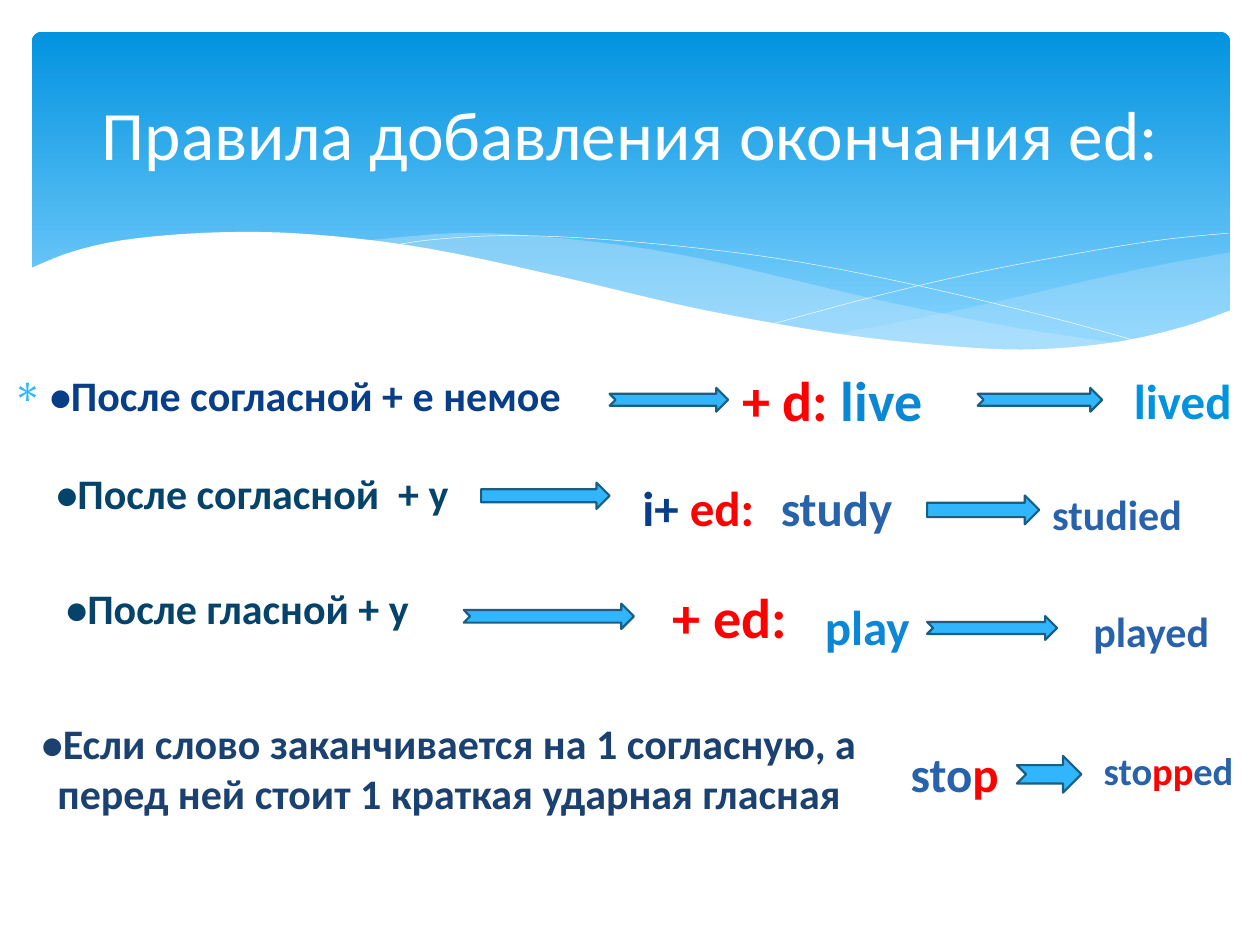
from lxml import etree
from pptx import Presentation
from pptx import util as u
from pptx.dml.color import RGBColor
from pptx.enum import shapes, text
from pptx.oxml.ns import qn

COLOURS = {
    "white": "FFFFFF", "sky_top": "0293E0", "sky_low": "83D3FE", "mist": "C6E7FC",
    "arrow": "31B6FD", "edge": "195F84", "navy": "073E87", "teal": "06436B",
    "ink": "1B4171", "blue": "2862AA", "bright": "0B87D6", "red": "FF0000",
}
PLAIN = shapes.MSO_SHAPE.RIGHT_ARROW
NOTCHED = shapes.MSO_SHAPE.NOTCHED_RIGHT_ARROW

# Header curves: x, y in cm from the header's corner
RIGHT_WAVE = [
    [(24.16, 4.45), (22.76, 4.7), (21.23, 5.03), (19.15, 5.51), (17.3, 5.89), (16.15, 6.1)],
    [(16.15, 6.1), (17.96, 6.32), (19.76, 6.43), (21.51, 6.32), (22.94, 6.05), (24.16, 5.64)],
]
MIDDLE_WAVE = [
    [(22.05, 6.3), (19.86, 5.97), (17.3, 5.46), (15.34, 5), (13.46, 4.57), (11.79, 4.29),
     (10.03, 4.11), (8.53, 4.06), (6.63, 4.22)],
    [(6.63, 4.22), (8.56, 4.52), (10.77, 5), (13.74, 5.66), (15.88, 6.07), (17.7, 6.32),
     (19.86, 6.43), (22.05, 6.3)],
]
FALLING_LINE = [[(7.21, 4.32), (8.1, 4.19), (9.55, 4.11), (11.28, 4.17), (13.49, 4.37),
                 (15.52, 4.65), (17.83, 5.11), (20.47, 5.74), (22.4, 6.27)]]
RISING_LINE = [[(14.94, 5.89), (17.02, 5.33), (19.08, 4.85), (21.36, 4.42),
                (22.83, 4.19), (24.13, 4.06)]]
WHITE_WAVE = [
    [(-0.05, 4.78), (0.86, 4.42), (2.06, 4.17), (3.86, 4.04), (5.72, 4.09), (8, 4.37),
     (10.72, 4.95), (13.46, 5.59), (16.33, 6.1), (18.69, 6.35), (20.27, 6.4),
     (21.89, 6.25), (23.24, 5.94), (24.18, 5.61)],
    [(24.18, 7.72), (-0.05, 7.72)],
]

# Each rule: top, texts (x, y, width, height, size, spans), arrows (x, y, width, height, kind)
RULES = [
    (7.24,
     [(0, 0.08, 22.5, 1.52, 24, [("•После согласной + e немое", "navy")]),
      (14.71, 0, 5, 1.63, 32, [("+ d: ", "red"), ("live", "bright")]),
      (22.61, 0.1, 2.59, 1.45, 28, [("lived", "sky_top")])],
     [(12.29, 0.58, 2.39, 0.48, NOTCHED), (19.71, 0.58, 2.51, 0.48, NOTCHED)]),
    (9.3,
     [(0.89, 0, 8.79, 1.27, 24, [("•После согласной  + y", "teal")]),
      (12.7, 0.2, 2.79, 1.45, 28, [("i+ ", "navy"), ("ed:", "red")]),
      (15.49, 0.2, 2.87, 1.45, 28, [("study", "blue")]),
      (20.96, 0.43, 3.53, 1.27, 24, [("studied", "blue")])],
     [(9.7, 0.43, 2.59, 0.53, PLAIN), (18.69, 0.69, 2.26, 0.58, PLAIN)]),
    (11.61,
     [(1.09, 0, 8.26, 1.27, 24, [("•После гласной + y", "teal")]),
      (13.31, 0, 3.4, 1.63, 32, [("+ ed:", "red")]),
      (16.38, 0.3, 2.31, 1.45, 28, [("play", "bright")]),
      (21.79, 0.48, 3.1, 1.27, 24, [("played", "blue")])],
     [(9.35, 0.56, 3.43, 0.51, NOTCHED), (18.69, 0.81, 2.62, 0.48, NOTCHED)]),
    (14.33,
     [(0, 0, 18.11, 2.31, 24,
       [("•Если слово заканчивается на 1 согласную, а перед ней стоит "
         "1 краткая ударная гласная", "ink")]),
      (18.11, 0.53, 2.39, 1.45, 28, [("sto", "blue"), ("p", "red")]),
      (22, 0.61, 3.71, 1.19, 22, [("sto", "blue"), ("pp", "red"), ("ed", "blue")])],
     [(20.5, 0.91, 1.3, 0.74, NOTCHED)]),
]


def colour(name):
    return RGBColor.from_string(COLOURS[name])


def smooth(points, steps=5):
    """Catmull-Rom curve through the points."""
    if len(points) < 3:
        return points
    padded = [points[0], *points, points[-1]]
    curve = []
    for a, b, c, d in zip(padded, padded[1:], padded[2:], padded[3:]):
        for t in (step / steps for step in range(steps)):
            curve.append(tuple(
                0.5 * (2 * q + (r - p) * t + (2 * p - 5 * q + 4 * r - s) * t ** 2
                       + (3 * q - p - 3 * r + s) * t ** 3)
                for p, q, r, s in zip(a, b, c, d)))
    return curve + [points[-1]]


def add_wave(page, left, top, curves, fill=None, opacity=100):
    points = [(u.Cm(left + x), u.Cm(top + y)) for curve in curves for x, y in smooth(curve)]
    builder = page.shapes.build_freeform(*points[0])
    builder.add_line_segments(points[1:], close=fill is not None)
    wave = builder.convert_to_shape()
    wave.shadow.inherit = False
    if fill is None:
        wave.fill.background()
        wave.line.color.rgb = colour("white")
        wave.line.width = u.Pt(0.25)
        return
    wave.fill.solid()
    wave.fill.fore_color.rgb = colour(fill)
    wave.line.fill.background()
    if opacity < 100:
        tint = wave.fill._xPr.find(".//" + qn("a:srgbClr"))
        etree.SubElement(tint, qn("a:alpha"), val=str(opacity * 1000))


def add_text(page, left, top, width, height, size, spans, bold=True, align=None, anchor=None):
    box = page.shapes.add_textbox(*map(u.Cm, (left, top, width, height)))
    box.text_frame.word_wrap = True
    box.text_frame.vertical_anchor = anchor
    para = box.text_frame.paragraphs[0]
    para.alignment = align
    for words, name in spans:
        span = para.add_run()
        span.text = words
        for key, value in {"name": "Calibri", "size": u.Pt(size), "bold": bold}.items():
            setattr(span.font, key, value)
        span.font.color.rgb = colour(name)
    return para


def add_star_bullet(para):
    props = para._p.get_or_add_pPr()
    props.set("marL", str(u.Cm(0.76)))
    props.set("indent", str(-u.Cm(0.76)))
    tint = etree.SubElement(props, qn("a:buClr"))
    etree.SubElement(tint, qn("a:srgbClr"), val=COLOURS["arrow"])
    etree.SubElement(props, qn("a:buChar"), char="∗")


def add_arrow(page, left, top, width, height, kind):
    arrow = page.shapes.add_shape(kind, *map(u.Cm, (left, top, width, height)))
    arrow.shadow.inherit = False
    arrow.fill.solid()
    arrow.fill.fore_color.rgb = colour("arrow")
    arrow.line.color.rgb = colour("edge")
    arrow.line.width = u.Pt(1.25)


def add_header(page, left, top, width, height):
    # Gradient panel
    panel = page.shapes.add_shape(shapes.MSO_SHAPE.ROUNDED_RECTANGLE,
                                  *map(u.Cm, (left, top, width, height)))
    panel.adjustments[0] = 0.03
    panel.shadow.inherit = False
    panel.line.fill.background()
    panel.fill.gradient()
    panel.fill.gradient_angle = 270
    stops = (("sky_top", 0), ("sky_low", 0.9))
    for stop, (name, position) in zip(panel.fill.gradient_stops, stops):
        stop.color.rgb = colour(name)
        stop.position = position
    # Waves
    add_wave(page, left, top, RIGHT_WAVE, "mist", 29)
    add_wave(page, left, top, MIDDLE_WAVE, "mist", 40)
    add_wave(page, left, top, FALLING_LINE)
    add_wave(page, left, top, RISING_LINE)
    add_wave(page, left, top, WHITE_WAVE, "white")
    # Title
    add_text(page, left + 0.64, top + 0.3, width - 1.3, 3.48, 39.6,
             [("Правила добавления окончания ed:", "white")], bold=False,
             align=text.PP_ALIGN.CENTER, anchor=text.MSO_ANCHOR.MIDDLE)


def add_rule(page, left, top, texts, arrows):
    paras = [add_text(page, left + x, top + y, *rest) for x, y, *rest in texts]
    for x, y, *rest in arrows:
        add_arrow(page, left + x, top + y, *rest)
    return paras[0]


def main():
    deck = Presentation()
    deck.slide_width, deck.slide_height = u.Cm(25.4), u.Cm(19.05)
    page = deck.slides.add_slide(deck.slide_layouts[6])
    add_header(page, 0.64, 0.64, 24.16, 6.86)
    leads = [add_rule(page, 0, *rule) for rule in RULES]
    add_star_bullet(leads[0])
    leads[-1].alignment = text.PP_ALIGN.CENTER
    deck.save("out.pptx")


if __name__ == "__main__":
    main()
